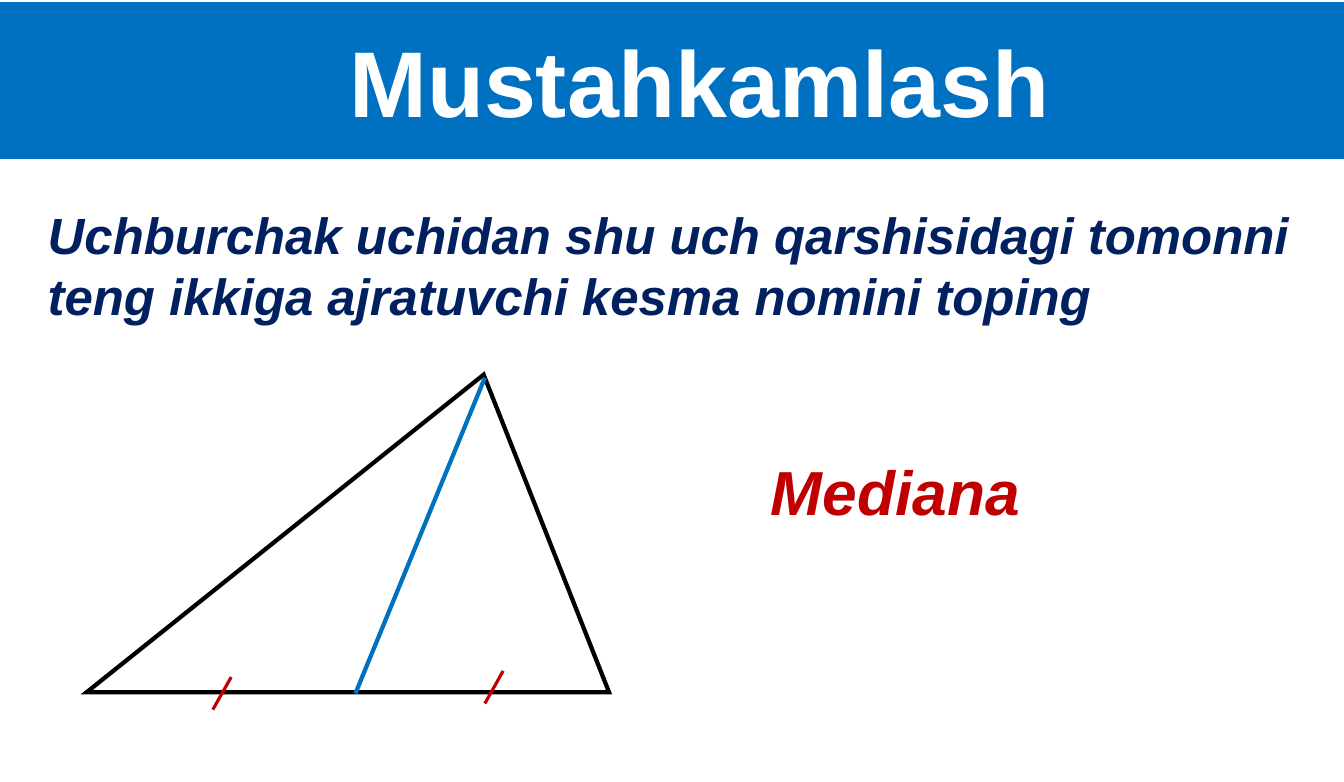
from lxml import etree
from pptx import Presentation
from pptx.dml.color import RGBColor
from pptx.enum.shapes import MSO_CONNECTOR, MSO_SHAPE
from pptx.enum.text import MSO_ANCHOR, PP_ALIGN
from pptx.oxml.ns import qn
from pptx.util import Pt

PX = 9144
STRAIGHT = MSO_CONNECTOR.STRAIGHT
RECTANGLE = MSO_SHAPE.RECTANGLE
TRIANGLE = MSO_SHAPE.ISOSCELES_TRIANGLE
MIDDLE = MSO_ANCHOR.MIDDLE
LEFT = PP_ALIGN.LEFT

BLUE = RGBColor(0x00, 0x70, 0xC0)
NAVY = RGBColor(0x00, 0x20, 0x60)
RED = RGBColor(0xC0, 0x00, 0x00)
WHITE = RGBColor(0xFF, 0xFF, 0xFF)
BLACK = RGBColor(0x00, 0x00, 0x00)


def emu(*lengths):
    """Turn px lengths into EMU."""
    return [length * PX for length in lengths]


def write(text_frame, text, size, color, italic=False):
    """Write one bold left-aligned run into the first paragraph."""
    paragraph = text_frame.paragraphs[0]
    paragraph.alignment = LEFT
    run = paragraph.add_run()
    run.text = text
    run.font.name = "Arial"
    run.font.size = Pt(size)
    run.font.bold = True
    run.font.italic = italic
    run.font.color.rgb = color


def add_line(slide, start, end, color, width):
    """Draw a straight line without a shadow."""
    line = slide.shapes.add_connector(STRAIGHT, *emu(*start, *end))
    line.line.color.rgb = color
    line.line.width = Pt(width)
    etree.SubElement(line._element.spPr, qn("a:effectLst"))


def add_title_band(slide, box, text):
    """Fill the band and set its indented title."""
    band = slide.shapes.add_shape(RECTANGLE, *emu(*box))
    band.shadow.inherit = False
    band.fill.solid()
    band.fill.fore_color.rgb = BLUE
    band.line.fill.background()
    band.text_frame.margin_left = 343 * PX
    band.text_frame.vertical_anchor = MIDDLE
    write(band.text_frame, text, 66, WHITE)


def add_text(slide, box, text, size, color, wrap):
    """Place an italic text box."""
    text_box = slide.shapes.add_textbox(*emu(*box))
    text_box.text_frame.word_wrap = wrap
    write(text_box.text_frame, text, size, color, italic=True)


def add_median_figure(slide, box):
    """Draw the triangle, its median and the equal-half ticks."""
    left, top, width, height = box
    triangle = slide.shapes.add_shape(TRIANGLE, *emu(*box))
    triangle.adjustments[0] = 0.76
    triangle.shadow.inherit = False
    triangle.fill.solid()
    triangle.fill.fore_color.rgb = WHITE
    triangle.line.color.rgb = BLACK
    triangle.line.width = Pt(3)
    outline = triangle._element.spPr.find(qn("a:ln"))
    etree.SubElement(outline, qn("a:miter")).set("lim", "800000")
    add_line(slide, (left + 391, top + 3), (left + 264, top + height + 1), BLUE, 3)
    for tick_x, tick_y in ((391, 291), (124, 297)):
        x, y = left + tick_x, top + tick_y
        add_line(slide, (x + 18, y), (x, y + 32), RED, 2.25)


def main():
    """Build the slide and save it."""
    presentation = Presentation()
    presentation.slide_width = Pt(950)
    presentation.slide_height = Pt(553)
    slide = presentation.slides.add_slide(presentation.slide_layouts[6])
    add_title_band(slide, (0, 2, 1320, 154), "Mustahkamlash")
    add_median_figure(slide, (85, 368, 513, 312))
    question = (
        "Uchburchak uchidan shu uch qarshisidagi tomonni "
        "teng ikkiga ajratuvchi kesma nomini toping"
    )
    add_text(slide, (37, 195, 1260, 131), question, 36, NAVY, True)
    add_text(slide, (747, 440, 267, 84), "Mediana", 44, RED, False)
    presentation.save("out.pptx")


if __name__ == "__main__":
    main()
